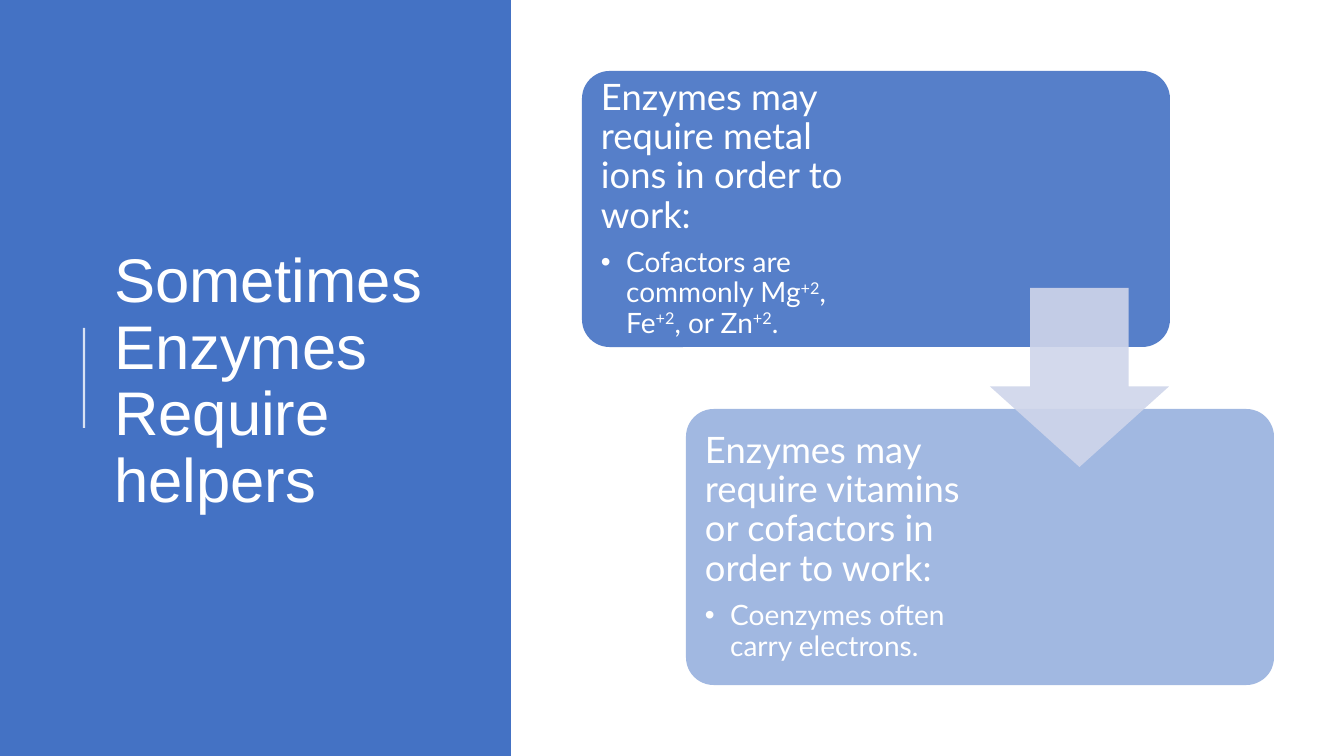
from lxml.etree import SubElement
from pptx import Presentation
from pptx.dml.color import RGBColor
from pptx.enum.shapes import MSO_CONNECTOR, MSO_SHAPE
from pptx.enum.text import MSO_ANCHOR, MSO_AUTO_SIZE, PP_ALIGN
from pptx.oxml.ns import qn
from pptx.util import Emu, Pt

COLORS = {"blue": "4472C4", "white": "FFFFFF", "pale": "CFD5EA"}
TITLE_FONT = "Arial"
BODY_FONT = "Lato"
EMU_PER_PX = 914400 / 100.8


def px(length):
    return Emu(round(length * EMU_PER_PX))


class SlideBuilder:
    def __init__(self, slide):
        self.slide = slide
        self.shapes = slide.shapes

    def paint(self, color_format, color, opacity=100):
        color_format.rgb = RGBColor.from_string(COLORS[color])
        if opacity < 100:
            color_element = color_format._xFill.find(qn("a:srgbClr"))
            SubElement(color_element, qn("a:alpha"), val=str(opacity * 1000))

    def shape(self, kind, box, color, opacity=100, adjustments=()):
        shape = self.shapes.add_shape(kind, *map(px, box))
        shape.shadow.inherit = False
        shape.fill.solid()
        self.paint(shape.fill.fore_color, color, opacity)
        shape.line.fill.background()
        for index, value in enumerate(adjustments):
            shape.adjustments[index] = value

    def line(self, start, end, color, width, opacity):
        rule = self.shapes.add_connector(
            MSO_CONNECTOR.STRAIGHT, *map(px, start + end))
        rule.line.width = Pt(width)
        rule.line.fill.solid()
        self.paint(rule.line.fill.fore_color, color, opacity)
        SubElement(rule._element.spPr, qn("a:effectLst"))

    def run(self, paragraph, text, font, size, superscript=False):
        run = paragraph.add_run()
        run.text = text
        run.font.name = font
        run.font.size = Pt(size)
        self.paint(run.font.color, "white")
        if superscript:
            run.font._element.set("baseline", "30000")

    def title(self, text, box, size):
        title = self.shapes.title
        title.left, title.top, title.width, title.height = map(px, box)
        frame = title.text_frame
        frame.word_wrap = True
        frame.auto_size = MSO_AUTO_SIZE.NONE
        frame.vertical_anchor = MSO_ANCHOR.MIDDLE
        paragraph = frame.paragraphs[0]
        paragraph.alignment = PP_ALIGN.LEFT
        paragraph.line_spacing = 0.9
        self.run(paragraph, text, TITLE_FONT, size)
        self.shapes._spTree.append(title._element)

    def bullet(self, paragraph):
        paragraph.level = 1
        properties = paragraph._p.get_or_add_pPr()
        properties.set("marL", "228600")
        properties.set("indent", "-228600")
        SubElement(properties, qn("a:buFont"), typeface="Arial")
        SubElement(properties, qn("a:buChar"), char="•")

    def card(self, left, top, text_width, opacity, heading, detail):
        width, height, inset = 588, 276, 8
        self.shape(MSO_SHAPE.ROUNDED_RECTANGLE, (left, top, width, height),
                   "blue", opacity, (0.1,))
        box = (left + inset, top + inset, text_width, height - 2 * inset)
        frame = self.shapes.add_textbox(*map(px, box)).text_frame
        frame.word_wrap = True
        frame.vertical_anchor = MSO_ANCHOR.MIDDLE
        frame.margin_left = frame.margin_right = px(11)
        frame.margin_top = frame.margin_bottom = px(11)

        heading_line = frame.paragraphs[0]
        heading_line.line_spacing = 0.9
        heading_line.space_after = Pt(9)
        self.run(heading_line, heading, BODY_FONT, 26)

        detail_line = frame.add_paragraph()
        detail_line.line_spacing = 0.9
        detail_line.space_after = Pt(3)
        self.bullet(detail_line)
        for text, superscript in detail:
            self.run(detail_line, text, BODY_FONT, 20, superscript)


def main():
    presentation = Presentation()
    presentation.slide_width = px(1344)
    presentation.slide_height = px(756)
    builder = SlideBuilder(
        presentation.slides.add_slide(presentation.slide_layouts[5]))

    builder.shape(MSO_SHAPE.RECTANGLE, (0, 0, 511, 756), "blue")
    builder.line((84, 428), (84, 328), "white", 1.5, 80)
    builder.title("Sometimes Enzymes Require helpers", (104, 79, 372, 607), 44)

    charge = ("+2", True)
    builder.card(
        582, 71, 301, 90, "Enzymes may require metal ions in order to work:",
        [("Cofactors are commonly Mg", False), charge, (", Fe", False), charge,
         (", or Zn", False), charge, (".", False)])
    builder.card(
        686, 409, 288, 50,
        "Enzymes may require vitamins or cofactors in order to work:",
        [("Coenzymes often carry electrons.", False)])
    builder.shape(MSO_SHAPE.DOWN_ARROW, (990, 288, 179, 179), "pale", 90,
                  (0.45, 0.55))
    arrow = builder.shapes[-1]
    arrow.adjustments[0], arrow.adjustments[1] = 0.55, 0.45

    presentation.save("out.pptx")


if __name__ == "__main__":
    main()
